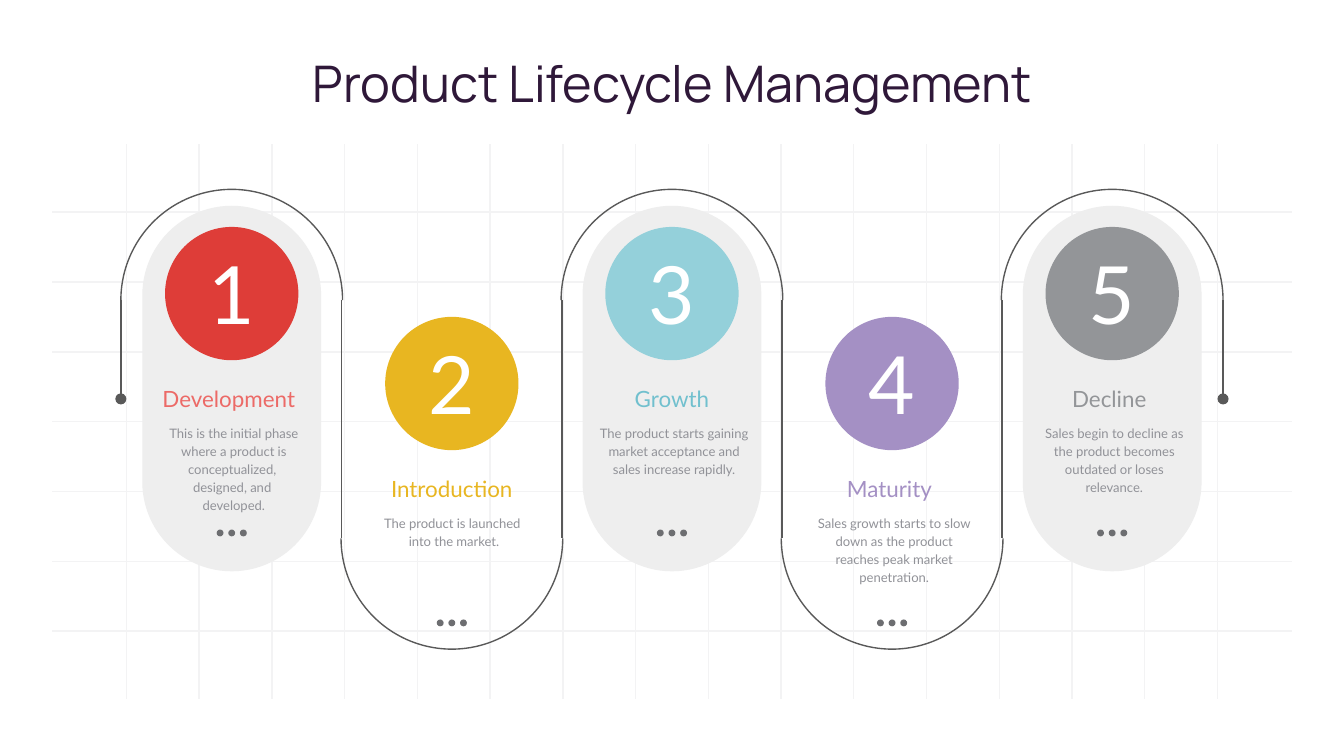
from pptx import Presentation
from pptx.dml.color import RGBColor
from pptx.enum.shapes import MSO_CONNECTOR as Link, MSO_SHAPE as Kind
from pptx.enum.text import MSO_AUTO_SIZE as Fit, PP_ALIGN as Align
from pptx.oxml.ns import qn
from pptx.util import Cm, Pt
from lxml.etree import SubElement

COLORS = {
    "title": "2F1839", "grid": "F3F3F4", "track": "595959",
    "pill": "EEEEEE", "body": "919298", "dots": "6D6E71", "white": "FFFFFF",
    "red": "DE3D38", "coral": "EC6A67", "yellow": "E8B621",
    "aqua": "94D0DA", "teal": "71C0CE", "purple": "A490C4", "gray": "939598",
}

STAGES = [
    ("Development ", "red", "coral",
     ["This is the initial phase where a product is conceptualized, ",
      "designed, and ", "developed."], 5),
    ("Introduction", "yellow", "yellow",
     ["The product is launched ", "into the market."], 2),
    ("Growth", "aqua", "teal",
     ["The product starts gaining market acceptance and sales increase rapidly."], 3),
    ("Maturity ", "purple", "purple",
     ["Sales growth starts to slow down as the product reaches peak market penetration."], 4),
    ("Decline ", "gray", "gray",
     ["Sales begin to decline as the product becomes outdated or loses relevance."], 4),
]

FIRST_CENTER, PITCH = 4.38, 4.16
DROP = 1.7
ARC_SIZE = 4.19
BEND_TOP, BEND_BOTTOM = 5.68, 10.17


def color(name):
    return RGBColor.from_string(COLORS[name])


def set_all(target, values):
    for name, value in values.items():
        setattr(target, name, value)


def add_line(page, start, end, tint, tail=None):
    line = page.shapes.add_connector(
        Link.STRAIGHT, *(Cm(value) for value in (*start, *end)))
    line.line.width = Pt(0.75)
    line.line.color.rgb = color(tint)
    if tail:
        SubElement(line.line._get_or_add_ln(), qn("a:tailEnd"), type=tail)
    SubElement(line._element.spPr, qn("a:effectLst"))


def add_filled(page, kind, center, top, width, height, tint):
    shape = page.shapes.add_shape(
        kind, Cm(center - width / 2), Cm(top), Cm(width), Cm(height))
    shape.shadow.inherit = False
    shape.fill.solid()
    shape.fill.fore_color.rgb = color(tint)
    shape.line.fill.background()
    return shape


def add_arc(page, center, top, rotation):
    arc = page.shapes.add_shape(
        Kind.ARC, Cm(center - ARC_SIZE / 2), Cm(top), Cm(ARC_SIZE), Cm(ARC_SIZE))
    arc.adjustments[0] = 108
    arc.adjustments[1] = 0
    arc.rotation = rotation
    arc.shadow.inherit = False
    arc.fill.background()
    arc.line.width = Pt(0.75)
    arc.line.color.rgb = color("track")


def add_text(page, center, top, width, height, texts, size, tint,
             font="Lato", spacing=None):
    box = page.shapes.add_textbox(
        Cm(center - width / 2), Cm(top), Cm(width), Cm(height))
    frame = box.text_frame
    set_all(frame, {"margin_left": 0, "margin_right": 0, "margin_top": 0,
                    "margin_bottom": 0, "word_wrap": True,
                    "auto_size": Fit.SHAPE_TO_FIT_TEXT})
    for index, text in enumerate(texts):
        para = frame.add_paragraph() if index else frame.paragraphs[0]
        set_all(para, {"alignment": Align.CENTER, "line_spacing": spacing})
        span = para.add_run()
        span.text = text
        set_all(span.font, {"name": font, "size": Pt(size)})
        span.font.color.rgb = color(tint)


def add_grid(page):
    left, right, count = 2.39, 23.01, 16
    for index in range(count):
        x = left + index * (right - left) / (count - 1)
        add_line(page, (x, 2.73), (x, 13.21), "grid")
    for index in range(7):
        y = 4.01 + index * 1.32
        add_line(page, (0.99, y), (24.41, y), "grid")


def add_track(page):
    last_center = FIRST_CENTER + (len(STAGES) - 1) * PITCH
    for index in range(len(STAGES)):
        center = FIRST_CENTER + index * PITCH
        if index % 2:
            add_arc(page, center, 8.08, 180)
        else:
            add_arc(page, center, 3.58, 0)
        if index:
            x = center - PITCH / 2
            add_line(page, (x, BEND_TOP), (x, BEND_BOTTOM), "track")
    for x in (FIRST_CENTER - ARC_SIZE / 2, last_center + ARC_SIZE / 2):
        add_line(page, (x, BEND_TOP), (x, 7.54), "track", "oval")


def add_stage(page, index, name, fill, label_tint, texts, lines):
    center = FIRST_CENTER + index * PITCH
    lowered = index % 2
    shift = DROP * lowered
    if not lowered:
        pill = add_filled(page, Kind.ROUNDED_RECTANGLE, center, 3.89, 3.38, 6.91, "pill")
        pill.adjustments[0] = 0.5
    add_filled(page, Kind.OVAL, center, 4.29 + shift, 2.52, 2.52, fill)
    add_text(page, center, 4.62 + shift, 1.73, 1.83, [str(index + 1)], 43, "white")
    add_text(page, center, 7.29 + shift, 3.48, 0.51, [name], 12, label_tint)
    add_text(page, center + 0.04, 8 + shift, 2.9, lines * 0.33, texts, 7, "body",
             spacing=1.15)
    for step in (-1, 0, 1):
        add_filled(page, Kind.OVAL, center + step * 0.22, 10.01 + shift,
                   0.13, 0.13, "dots")


def main():
    deck = Presentation()
    set_all(deck, {"slide_width": Cm(25.4), "slide_height": Cm(14.29)})
    page = deck.slides.add_slide(deck.slide_layouts[6])
    add_grid(page)
    add_text(page, 12.7, 0.99, 23.4, 1.14, ["Product Lifecycle Management"], 27,
             "title", font="Manrope")
    add_track(page)
    for index, stage in enumerate(STAGES):
        add_stage(page, index, *stage)
    deck.save("out.pptx")


if __name__ == "__main__":
    main()
